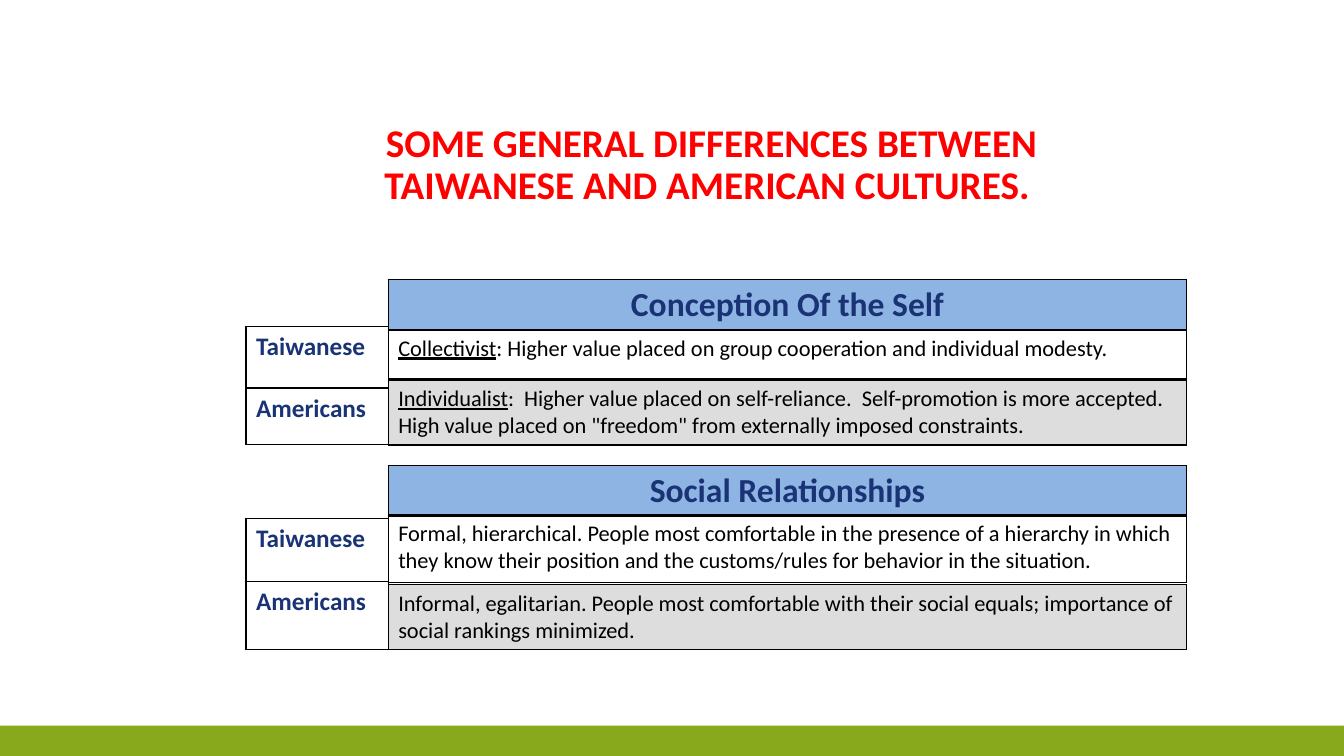
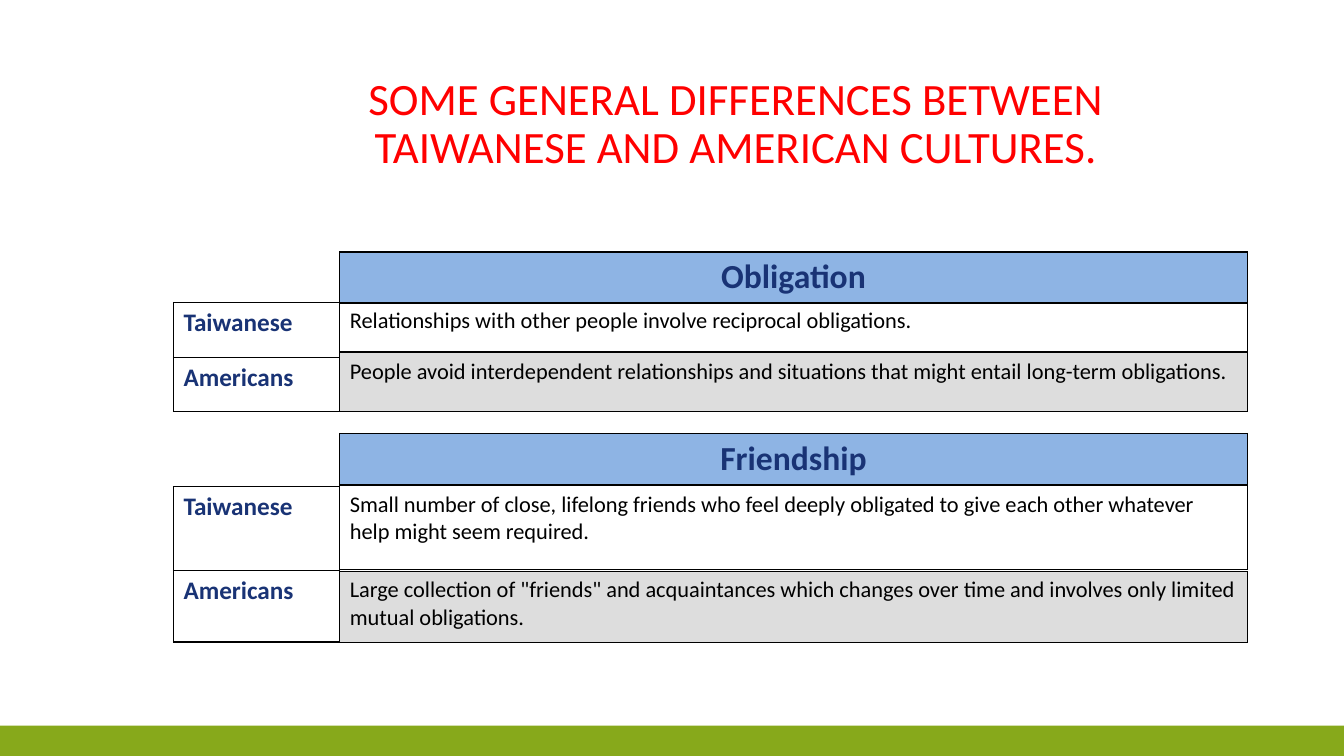
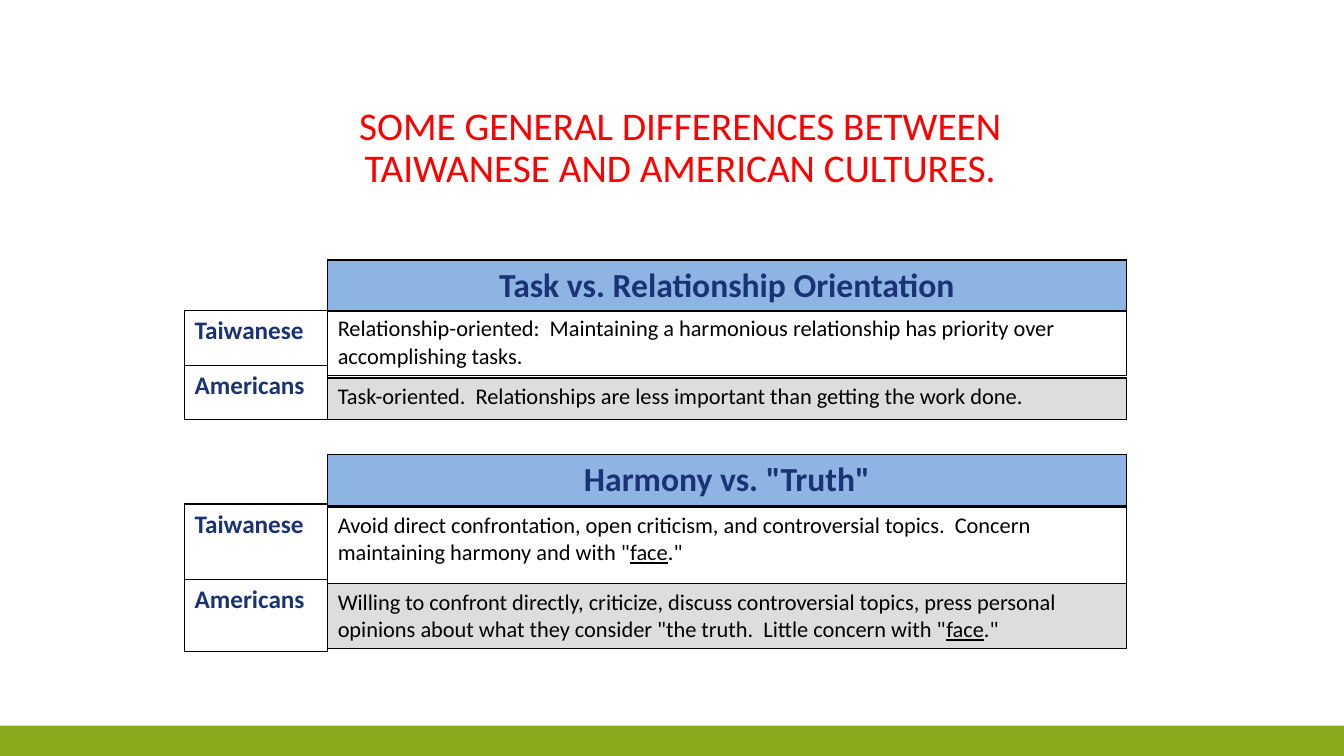
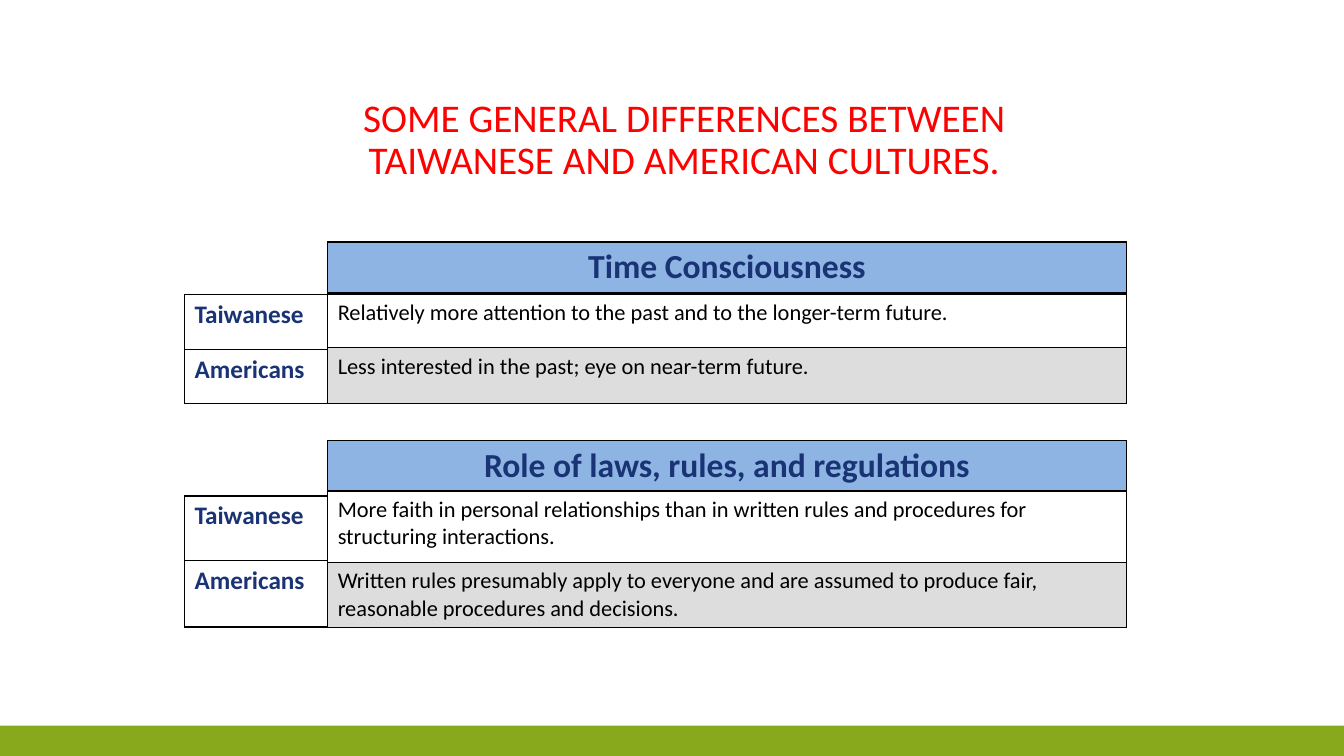
"""Build four slides that compare Taiwanese and American cultures."""
import pptx
import pptx.util
import pptx.dml.color
import pptx.enum.shapes
import pptx.enum.text
import pptx.oxml
import pptx.oxml.ns

INCH = pptx.util.Inches
ALIGN = pptx.enum.text.PP_ALIGN
WIDE, HIGH, BAND = 13.33, 7.5, 0.3
HEAD = 0.5
FONT = "Calibri"
COLORS = {"title": "FF0000", "navy": "193375", "text": "000000", "line": "000000",
          "blue": "8EB4E4", "gray": "DDDDDD", "green": "87A91B"}
TITLE = "SOME GENERAL DIFFERENCES BETWEEN TAIWANESE AND AMERICAN CULTURES."
GROUPS = ["Taiwanese", "Americans"]

SLIDES = [
    {"title": TITLE + " ", "at": (3.14, 1.03, 7.83, 1.23), "size": 28, "bold": True,
     "left": 2.44, "cols": (1.41, 7.92), "blocks": [
         {"head": "Conception Of the Self", "top": 2.77,
          "names": (3.24, [0.61, 0.56]),
          "rows": [(3.27, 0.49, "_Collectivist_: Higher value placed on group cooperation "
                                "and individual modesty."),
                   (3.77, 0.63, "_Individualist_:  Higher value placed on self-reliance.  "
                                "Self-promotion is more accepted. High value placed on "
                                "\"freedom\" from externally imposed constraints.")]},
         {"head": "Social Relationships", "top": 4.62,
          "names": (5.14, [0.63, 0.67]),
          "rows": [(5.11, 0.67, "Formal, hierarchical. People most comfortable in the presence "
                                "of a hierarchy in which they know their position and the "
                                "customs/rules for behavior in the situation."),
                   (5.8, 0.63, "Informal, egalitarian. People most comfortable with their "
                               "social equals; importance of social rankings minimized.")]}]},
    {"title": TITLE, "at": (2.72, 0.58, 9.16, 1.32), "size": 32, "bold": False,
     "left": 1.72, "cols": (1.65, 9), "blocks": [
         {"head": "Obligation", "top": 2.5,
          "names": (3, [0.55, 0.53]),
          "rows": [(3, 0.49, "Relationships with other people involve reciprocal obligations."),
                   (3.5, 0.58, "People avoid interdependent relationships and situations that "
                               "might entail long-term obligations.")]},
         {"head": "Friendship", "top": 4.3,
          "names": (4.83, [0.83, 0.71]),
          "rows": [(4.82, 0.83, "Small number of close, lifelong friends who feel deeply "
                                "obligated to give each other whatever help might seem "
                                "required."),
                   (5.67, 0.7, "Large collection of \"friends\" and acquaintances which changes "
                               "over time and involves only limited mutual obligations.")]}]},
    {"title": TITLE, "at": (2.83, 0.79, 7.83, 1.37), "size": 28, "bold": False,
     "left": 1.83, "cols": (1.42, 7.92), "blocks": [
         {"head": "Task vs. Relationship Orientation", "top": 2.58,
          "names": (3.08, [0.55, 0.53]),
          "rows": [(3.08, 0.63, "Relationship-oriented:  Maintaining a harmonious relationship "
                                "has priority over accomplishing tasks."),
                   (3.75, 0.41, "Task-oriented.  Relationships are less important than getting "
                                "the work done.")]},
         {"head": "Harmony vs. \"Truth\"", "top": 4.51,
          "names": (5, [0.75, 0.71]),
          "rows": [(5.03, 0.76, "Avoid direct confrontation, open criticism, and controversial "
                                "topics.  Concern maintaining harmony and with \"_face_.\""),
                   (5.79, 0.63, "Willing to confront directly, criticize, discuss controversial "
                                "topics, press personal opinions about what they consider "
                                "\"the truth.  Little concern with \"_face_.\"")]}]},
    {"title": TITLE, "at": (2.87, 0.71, 7.83, 1.37), "size": 28, "bold": False,
     "left": 1.83, "cols": (1.42, 7.92), "blocks": [
         {"head": "Time Consciousness", "top": 2.4,
          "names": (2.92, [0.55, 0.53]),
          "rows": [(2.92, 0.53, "Relatively more attention to the past and to the longer-term "
                                "future."),
                   (3.45, 0.55, "Less interested in the past; eye on near-term future.")]},
         {"head": "Role of laws, rules, and regulations", "top": 4.37,
          "names": (4.92, [0.64, 0.66]),
          "rows": [(4.87, 0.72, "More faith in personal relationships than in written rules and "
                                "procedures for structuring interactions."),
                   (5.58, 0.63, "Written rules presumably apply to everyone and are assumed to "
                                "produce fair, reasonable procedures and decisions.")]}]},
]


def tint(name):
    return pptx.dml.color.RGBColor.from_string(COLORS[name])


def write(frame, text, size=16, color="text", bold=False, align=ALIGN.LEFT, space=None):
    para = frame.paragraphs[0]
    para.alignment = align
    para.line_spacing = space
    for spot, part in enumerate(text.split("_")):
        if part:
            run = para.add_run()
            run.text = part
            font = run.font
            font.name, font.size, font.bold = FONT, pptx.util.Pt(size), bold
            font.color.rgb = tint(color)
            if spot % 2:
                font.underline = True


def border(frame):
    for props in frame.element.iter(pptx.oxml.ns.qn("a:tcPr")):
        for spot, side in enumerate("LRTB"):
            props.insert(spot, pptx.oxml.parse_xml(
                f'<a:ln{side} {pptx.oxml.ns.nsdecls("a")} w="12700"><a:solidFill>'
                f'<a:srgbClr val="{COLORS["line"]}"/></a:solidFill></a:ln{side}>'))


def grid(slide, left, top, width, rows, texts, fill=None, **style):
    frame = slide.shapes.add_table(len(rows), 1, INCH(left), INCH(top),
                                   INCH(width), INCH(sum(rows)))
    table = frame.table
    table.first_row = table.horz_banding = False
    for spot, (high, text) in enumerate(zip(rows, texts)):
        table.rows[spot].height = INCH(high)
        cell = table.cell(spot, 0)
        if fill:
            cell.fill.solid()
            cell.fill.fore_color.rgb = tint(fill)
        else:
            cell.fill.background()
        write(cell.text_frame, text, **style)
    border(frame)


def add_band(slide, master):
    band = slide.shapes.add_shape(pptx.enum.shapes.MSO_SHAPE.RECTANGLE, 0, INCH(HIGH - BAND),
                                  INCH(WIDE), INCH(BAND))
    band.shadow.inherit = False
    band.fill.solid()
    band.fill.fore_color.rgb = tint("green")
    band.line.fill.background()
    master.element.cSld.spTree.insert(2, band.element)


def add_title(slide, page):
    title = slide.shapes.title
    title.left, title.top, title.width, title.height = map(INCH, page["at"])
    frame = title.text_frame
    frame.auto_size = pptx.enum.text.MSO_AUTO_SIZE.NONE
    frame.vertical_anchor = pptx.enum.text.MSO_ANCHOR.MIDDLE
    write(frame, page["title"], size=page["size"], color="title", bold=page["bold"],
          align=ALIGN.CENTER, space=0.9)


def add_block(slide, page, block):
    left, (slim, broad) = page["left"], page["cols"]
    top, rows = block["names"]
    grid(slide, left, top, slim, rows, GROUPS, size=18, color="navy", bold=True)
    grid(slide, left + slim, block["top"], broad, [HEAD], [block["head"]], fill="blue",
         size=24, color="navy", bold=True, align=ALIGN.CENTER)
    for (top, high, text), fill in zip(block["rows"], (None, "gray")):
        grid(slide, left + slim, top, broad, [high], [text], fill=fill)


def main():
    deck = pptx.Presentation()
    deck.slide_width, deck.slide_height = INCH(WIDE), INCH(HIGH)
    for spot, page in enumerate(SLIDES):
        slide = deck.slides.add_slide(deck.slide_layouts[5])
        if spot == 0:
            add_band(slide, deck.slide_master)
        add_title(slide, page)
        for block in page["blocks"]:
            add_block(slide, page, block)
    deck.save("out.pptx")


if __name__ == "__main__":
    main()
